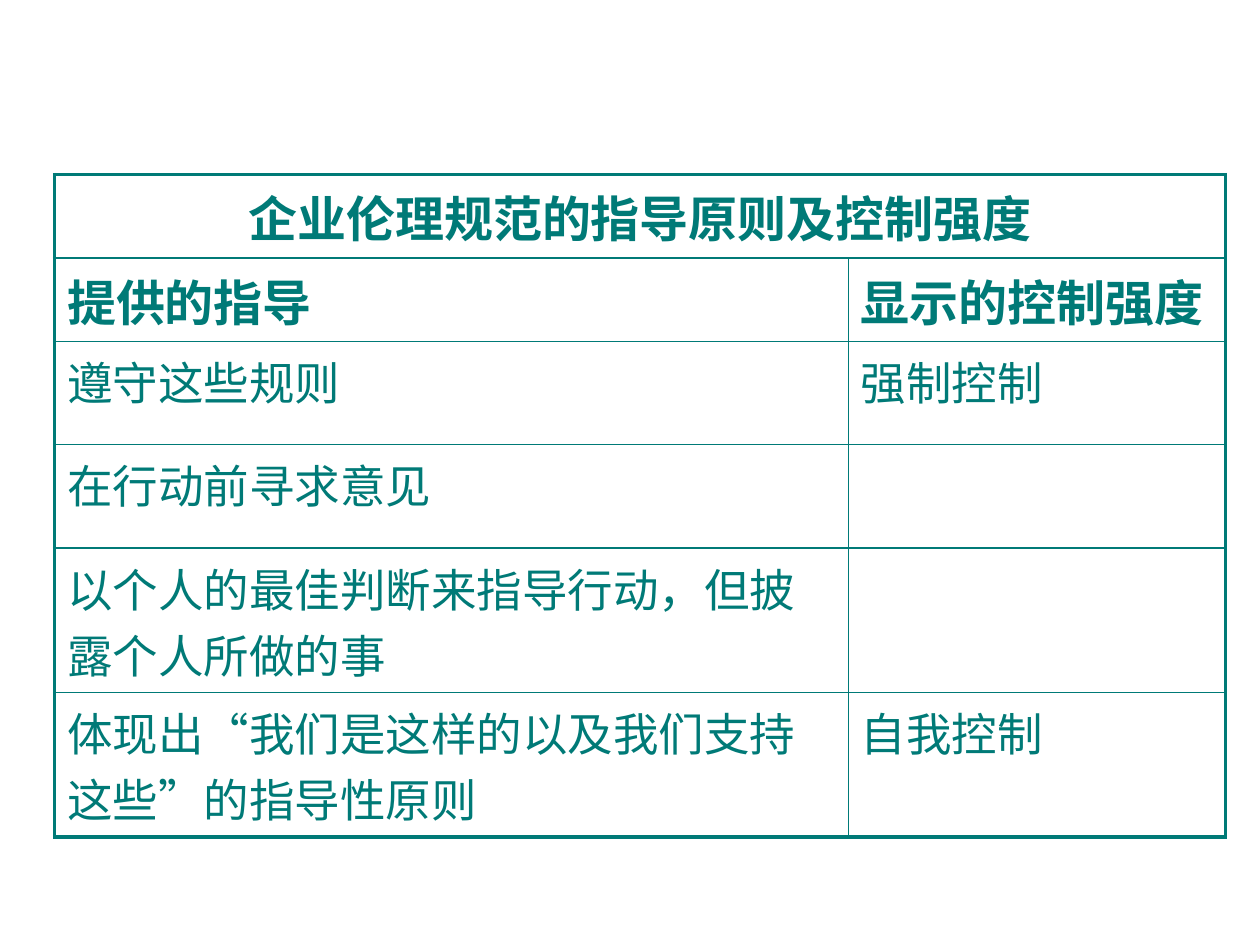
from dataclasses import dataclass

from lxml.etree import SubElement
from pptx import Presentation
from pptx.dml.color import RGBColor
from pptx.enum.text import PP_ALIGN
from pptx.oxml.ns import qn
from pptx.util import Cm, Pt


@dataclass(frozen=True)
class Theme:
    """Colours, type sizes and line widths of the slide."""
    ink: str = "007A77"
    font: str = "Arial"
    heading: int = 28
    body: int = 26
    outer_line: float = 2.25
    inner_line: float = 1


THEME = Theme()
TITLE = "企业伦理规范的指导原则及控制强度"
HEADINGS = ("提供的指导", "显示的控制强度")
PRINCIPLES = (
    ("遵守这些规则", "强制控制"),
    ("在行动前寻求意见", ""),
    ("以个人的最佳判断来指导行动，但披露个人所做的事", ""),
    ("体现出“我们是这样的以及我们支持这些”的指导性原则", "自我控制"),
)
COLUMN_WIDTHS = (16, 7.6)
HEADING_HEIGHT, BODY_HEIGHT = 1.6, 2.08


def write_text(cell, text, size=THEME.body, bold=False, align=PP_ALIGN.LEFT):
    """Write one formatted paragraph into a cell."""
    para = cell.text_frame.paragraphs[0]
    para.alignment = align
    para.font.size = Pt(size)
    if text:
        span = para.add_run()
        span.text = text
        span.font.name = THEME.font
        span.font.size = Pt(size)
        span.font.bold = bold
        span.font.color.rgb = RGBColor.from_string(THEME.ink)


def draw_borders(cell, outer_sides):
    """Rule all four sides of a cell, with a heavier line on the outer ones."""
    properties = cell._tc.get_or_add_tcPr()
    for side in "LRTB":
        width = THEME.outer_line if side in outer_sides else THEME.inner_line
        line = SubElement(properties, qn(f"a:ln{side}"), w=str(Pt(width)))
        fill = SubElement(line, qn("a:solidFill"))
        SubElement(fill, qn("a:srgbClr"), val=THEME.ink)


def add_principles_table(page, left, top):
    """Place the table of guiding principles with its corner at left, top."""
    rows = (( TITLE, ""), HEADINGS, *PRINCIPLES)
    heights = [HEADING_HEIGHT] * 2 + [BODY_HEIGHT] * len(PRINCIPLES)
    frame = page.shapes.add_table(len(rows), len(COLUMN_WIDTHS), left, top,
                                  Cm(sum(COLUMN_WIDTHS)), Cm(sum(heights)))
    table = frame.table
    table.first_row = table.horz_banding = False
    for column, width in zip(table.columns, COLUMN_WIDTHS):
        column.width = Cm(width)
    table.cell(0, 0).merge(table.cell(0, 1))

    last_row, last_column = len(rows) - 1, len(COLUMN_WIDTHS) - 1
    for r, (texts, height) in enumerate(zip(rows, heights)):
        table.rows[r].height = Cm(height)
        heading = r < 2
        for c, text in enumerate(texts):
            cell = table.cell(r, c)
            write_text(cell, text, bold=heading,
                       size=THEME.heading if heading else THEME.body,
                       align=PP_ALIGN.CENTER if r == 0 else PP_ALIGN.LEFT)
            edges = {"L": c == 0, "R": c == last_column or cell.is_merge_origin,
                     "T": r == 0, "B": r == last_row}
            draw_borders(cell, [side for side, outer in edges.items() if outer])
            cell.fill.background()


def main():
    """Build the slide and save the deck."""
    deck = Presentation()
    deck.slide_width, deck.slide_height = Cm(25.4), Cm(19.05)
    page = deck.slides.add_slide(deck.slide_layouts[6])
    add_principles_table(page, Cm(1.1), Cm(3.52))
    deck.save("out.pptx")


if __name__ == "__main__":
    main()
